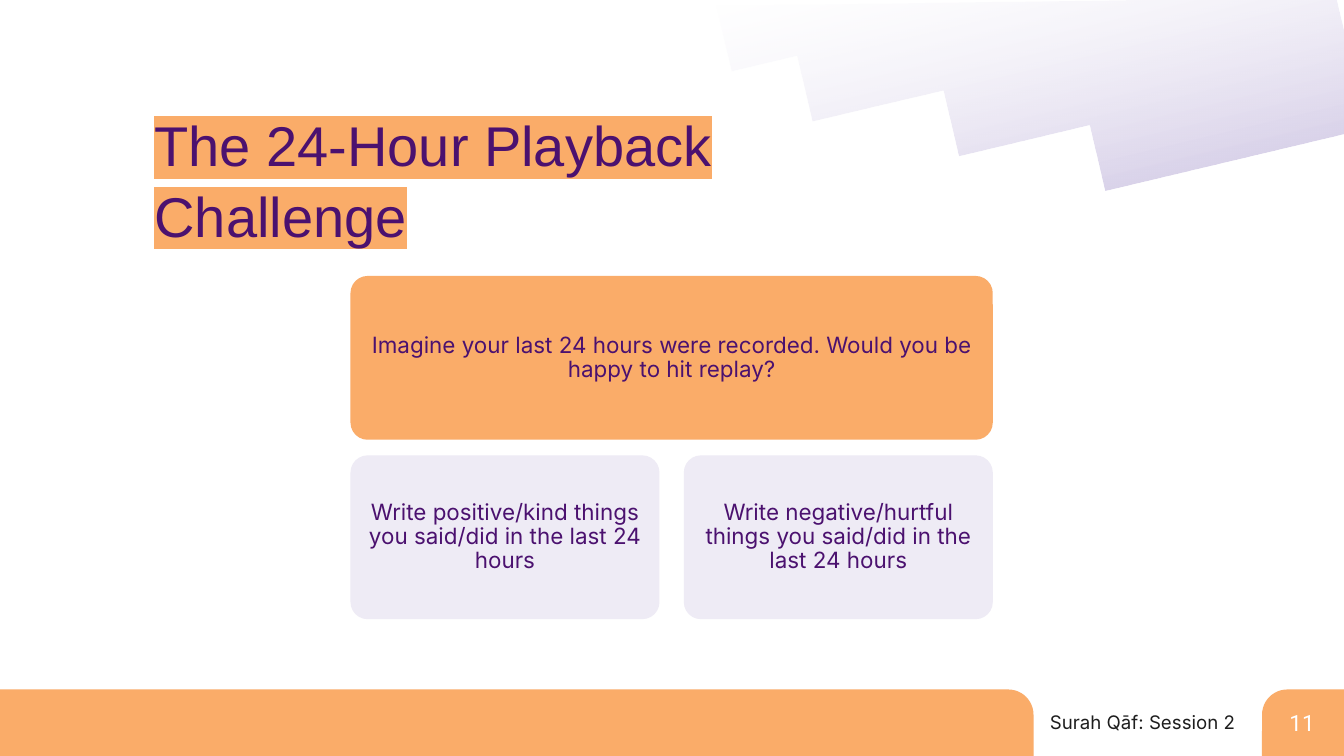
from math import cos, radians, sin
from typing import NamedTuple

from lxml.etree import SubElement
from pptx import Presentation
from pptx.dml.color import RGBColor
from pptx.enum.shapes import MSO_SHAPE as Shape
from pptx.enum.text import MSO_ANCHOR as Anchor, PP_ALIGN as Align
from pptx.oxml.ns import qn
from pptx.util import Inches, Pt

COLORS = {
    "orange": "FAAC69",
    "purple": "4B116F",
    "lavender": "EEEBF5",
    "violet": "C3B8DE",
    "ink": "1E1E1E",
    "white": "FFFFFF",
}


class Card(NamedTuple):
    text: str
    left: float
    top: float
    width: float
    fill: str


CARD_LEFT, CARD_TOP, CARD_HEIGHT = 5.23, 4.12, 2.41
FULL_WIDTH, HALF_WIDTH, ROW_PITCH = 9.53, 4.57, 2.67
RIGHT_LEFT = CARD_LEFT + FULL_WIDTH - HALF_WIDTH
CARDS = [
    Card("Imagine your last 24 hours were recorded. Would you be happy to hit replay?",
         CARD_LEFT, CARD_TOP, FULL_WIDTH, "orange"),
    Card("Write positive/kind things you said/did in the last 24 hours",
         CARD_LEFT, CARD_TOP + ROW_PITCH, HALF_WIDTH, "lavender"),
    Card("Write negative/hurtful things you said/did in the last 24 hours",
         RIGHT_LEFT, CARD_TOP + ROW_PITCH, HALF_WIDTH, "lavender"),
]

# Corner wave: start point, then line (1 point) or Bézier (3 points) segments
WAVE_START = (17.43, 2.44)
WAVE_SEGMENTS = [
    [(17.67, 2.45), (17.91, 2.44), (18.14, 2.43)],
    [(18.61, 2.41), (19.06, 2.36), (19.51, 2.31)],
    [(20.01, 2.25)],
    [(20.01, 0.01)],
    [(10.37, 0.01)],
    [(10.55, 0.15)],
    [(10.99, 0.48), (11.46, 0.77), (11.92, 1.03)],
    [(13.8, 2.06), (15.73, 2.42), WAVE_START],
]
WAVE_CENTER = (15.44, 1.07)
WAVE_ROTATION = -13.3
CURVE_STEPS = 24


def rgb(name: str) -> RGBColor:
    return RGBColor.from_string(COLORS[name])


def write(sp, text: str, *, size: float, font: str, color: str, align=Align.LEFT,
          anchor=Anchor.TOP, inset_y: float = 0.05, spacing: float = 1.0,
          highlight: str = "") -> None:
    tf = sp.text_frame
    tf.word_wrap = True
    tf.vertical_anchor = anchor
    tf.margin_left = tf.margin_right = Inches(0.1)
    tf.margin_top = tf.margin_bottom = Inches(inset_y)
    p = tf.paragraphs[0]
    p.alignment = align
    p.line_spacing = spacing
    r = p.add_run()
    r.text = text
    r.font.size, r.font.name = Pt(size), font
    r.font.color.rgb = rgb(color)
    if highlight:
        rpr = r.font._element
        mark = SubElement(rpr, qn("a:highlight"))
        SubElement(mark, qn("a:srgbClr"), val=COLORS[highlight])
        rpr.find(qn("a:solidFill")).addnext(mark)


def add_text(s, left: float, top: float, width: float, height: float, text: str, **fmt):
    sp = s.shapes.add_textbox(Inches(left), Inches(top), Inches(width), Inches(height))
    write(sp, text, **fmt)
    return sp


def add_block(s, kind, left: float, top: float, width: float, height: float,
              fill: str, corner: float):
    sp = s.shapes.add_shape(kind, Inches(left), Inches(top), Inches(width), Inches(height))
    sp.shadow.inherit = False
    sp.adjustments[0] = corner
    sp.fill.solid()
    sp.fill.fore_color.rgb = rgb(fill)
    sp.line.fill.background()
    return sp


def add_card(s, card: Card) -> None:
    sp = add_block(s, Shape.ROUNDED_RECTANGLE, card.left, card.top, card.width,
                   CARD_HEIGHT, card.fill, 0.1)
    sp.line.color.rgb = rgb(card.fill)
    sp.line.width = Pt(2)
    write(sp, card.text, size=24, font="Inter", color="purple", align=Align.CENTER,
          anchor=Anchor.MIDDLE, inset_y=0.1, spacing=0.9)


def wave_points() -> list[tuple[float, float]]:
    points = [WAVE_START]
    for segment in WAVE_SEGMENTS:
        if len(segment) == 1:
            points += segment
            continue
        curve = [points[-1], *segment]
        for step in range(1, CURVE_STEPS + 1):
            t = step / CURVE_STEPS
            weights = ((1 - t) ** 3, 3 * t * (1 - t) ** 2, 3 * t * t * (1 - t), t ** 3)
            points.append(tuple(sum(w * pt[axis] for w, pt in zip(weights, curve))
                                for axis in (0, 1)))
    return points


def unrotate(point: tuple[float, float]) -> tuple[float, float]:
    a = radians(-WAVE_ROTATION)
    cx, cy = WAVE_CENTER
    dx, dy = point[0] - cx, point[1] - cy
    return cx + dx * cos(a) - dy * sin(a), cy + dx * sin(a) + dy * cos(a)


def add_wave(s) -> None:
    # Drawn level, then rotated so that the gradient tilts with it
    points = [unrotate(pt) for pt in wave_points()]
    builder = s.shapes.build_freeform(*points[0], scale=Inches(1))
    builder.add_line_segments(points[1:], close=True)
    sp = builder.convert_to_shape()
    sp.rotation = WAVE_ROTATION
    sp.shadow.inherit = False
    sp.line.fill.background()
    sp.fill.gradient()
    sp.fill.gradient_angle = 90
    for stop, name in zip(sp.fill.gradient_stops, ("violet", "white")):
        stop.color.rgb = rgb(name)
    clear = sp._element.spPr.findall(".//" + qn("a:srgbClr"))[-1]
    SubElement(clear, qn("a:alpha"), val="0")


def main() -> None:
    prs = Presentation()
    prs.slide_width, prs.slide_height = Inches(20), Inches(11.25)
    s = prs.slides.add_slide(prs.slide_layouts[6])

    # Footer
    tab = add_block(s, Shape.ROUND_1_RECTANGLE, 18.78, 10.26, 1.22, 0.99, "orange", 0.379)
    tab._element.spPr.xfrm.set("flipH", "1")
    add_text(s, 14.87, 10.53, 3.61, 0.44, "Surah Qāf: Session 2", size=20,
             font="Inter", color="ink", align=Align.RIGHT)
    add_text(s, 19.09, 10.5, 0.61, 0.5, "11", size=24, font="Roboto", color="white")
    add_block(s, Shape.ROUND_1_RECTANGLE, 0, 10.26, 15.38, 0.99, "orange", 0.379)

    # Corner wave and title
    add_wave(s)
    add_text(s, 2.2, 1.55, 8.79, 2.12, "The 24-Hour Playback Challenge", size=60,
             font="Arial", color="purple", spacing=1.05, highlight="orange")

    # Challenge cards
    for card in CARDS:
        add_card(s, card)

    prs.save("out.pptx")


if __name__ == "__main__":
    main()
